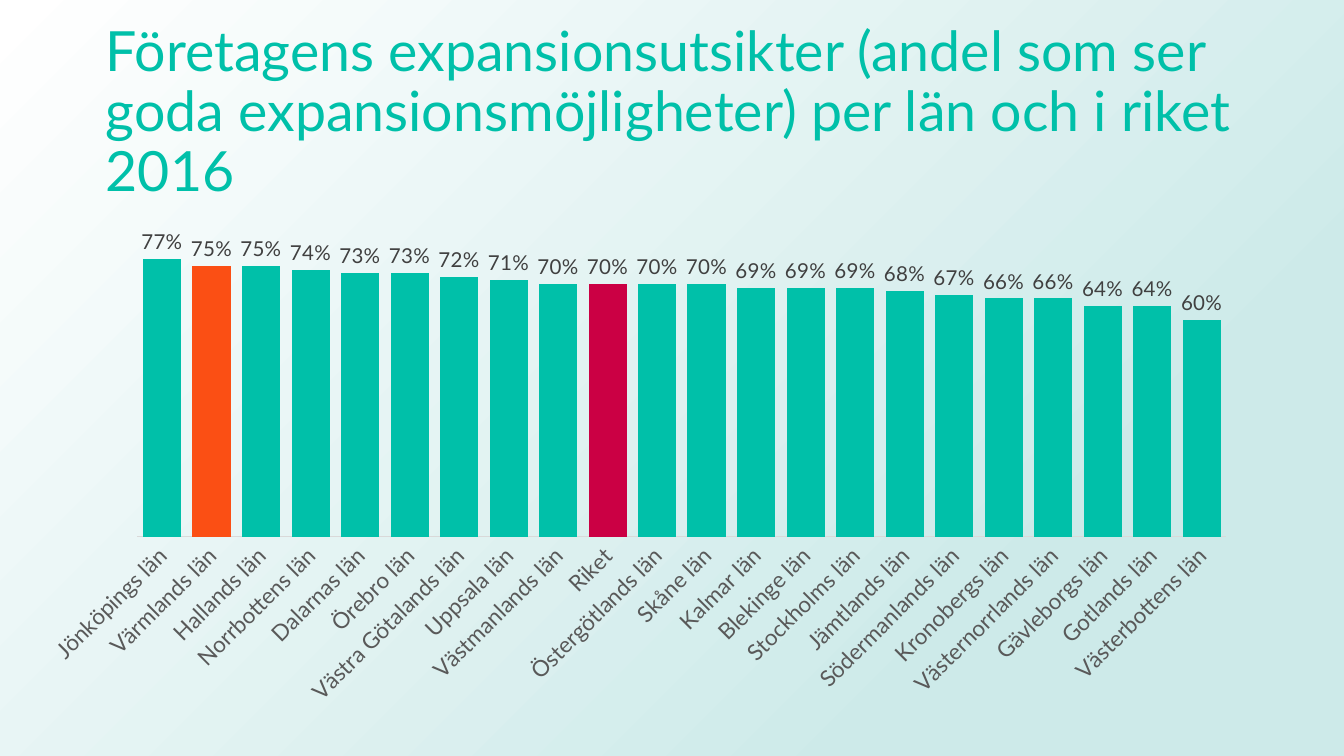
"""Builds a slide with expansion prospects per Swedish county in 2016."""
import pptx
import pptx.chart.data
import pptx.dml.color
import pptx.enum.chart
import pptx.enum.shapes
import pptx.enum.text
import pptx.oxml
import pptx.oxml.ns
import pptx.util
from pptx.util import Cm

COLORS = {
    "teal": "00C0A9",
    "orange": "FB4F14",
    "crimson": "CB0044",
    "mist": "CDEAE9",
    "white": "FFFFFF",
    "axis_text": "595959",
    "label_text": "404040",
    "axis_line": "D9D9D9",
}
WIDTH, HEIGHT = Cm(25.4), Cm(14.29)
TITLE = ("Företagens expansionsutsikter (andel som ser goda "
         "expansionsmöjligheter) per län och i riket 2016")
SHARES = {
    "Jönköpings län": 0.77, "Värmlands län": 0.75, "Hallands län": 0.75,
    "Norrbottens län": 0.74, "Dalarnas län": 0.73, "Örebro län": 0.73,
    "Västra Götalands län": 0.72, "Uppsala län": 0.71,
    "Västmanlands län": 0.70, "Riket": 0.70, "Östergötlands län": 0.70,
    "Skåne län": 0.70, "Kalmar län": 0.69, "Blekinge län": 0.69,
    "Stockholms län": 0.69, "Jämtlands län": 0.68,
    "Södermanlands län": 0.67, "Kronobergs län": 0.66,
    "Västernorrlands län": 0.66, "Gävleborgs län": 0.64,
    "Gotlands län": 0.64, "Västerbottens län": 0.60,
}
HIGHLIGHTS = {"Värmlands län": "orange", "Riket": "crimson"}
AUTOMATIC_ROTATION = "-60000000"


def rgb(name):
    """Return the named colour."""
    return pptx.dml.color.RGBColor.from_string(COLORS[name])


def apply(target, values):
    """Set each attribute of the target from a dict."""
    for attribute, value in values.items():
        setattr(target, attribute, value)


def style_font(font, size, color):
    """Give a font the slide's typeface, a size and a colour."""
    apply(font, {"name": "Lato", "size": pptx.util.Pt(size), "bold": False})
    font.color.rgb = rgb(color)


def paint(fill, color):
    """Make a fill solid in the named colour."""
    fill.solid()
    fill.fore_color.rgb = rgb(color)


def add_backdrop(slide):
    """Cover the slide with a gradient centred on the lower right corner."""
    backdrop = slide.shapes.add_shape(
        pptx.enum.shapes.MSO_SHAPE.RECTANGLE, 0, 0, WIDTH, HEIGHT)
    backdrop.shadow.inherit = False
    backdrop.line.fill.background()
    gradient = pptx.oxml.parse_xml(
        f'<a:gradFill {pptx.oxml.ns.nsdecls("a")} rotWithShape="1"><a:gsLst>'
        f'<a:gs pos="23000"><a:srgbClr val="{COLORS["mist"]}"/></a:gs>'
        f'<a:gs pos="100000"><a:srgbClr val="{COLORS["white"]}"/></a:gs>'
        '</a:gsLst><a:path path="circle">'
        '<a:fillToRect l="100000" t="100000"/></a:path></a:gradFill>')
    properties = backdrop.fill._xPr
    properties.find(pptx.oxml.ns.qn("a:prstGeom")).addnext(gradient)


def add_title(slide):
    """Add the heading."""
    heading = slide.shapes.add_textbox(Cm(1.75), Cm(0.76), Cm(21.9), Cm(2.77))
    frame = heading.text_frame
    apply(frame, {"word_wrap": True,
                  "vertical_anchor": pptx.enum.text.MSO_ANCHOR.MIDDLE})
    paragraph = frame.paragraphs[0]
    paragraph.line_spacing = 0.9
    sentence = paragraph.add_run()
    sentence.text = TITLE
    style_font(sentence.font, 29.7, "teal")


def format_axes(chart):
    """Show county names that slant to fit and hide the share scale."""
    counties, shares = chart.category_axis, chart.value_axis
    no_ticks = pptx.enum.chart.XL_TICK_MARK.NONE
    apply(counties, {"major_tick_mark": no_ticks, "minor_tick_mark": no_ticks,
                     "has_major_gridlines": False})
    style_font(counties.tick_labels.font, 12, "axis_text")
    counties.tick_labels._element.txPr.bodyPr.set("rot", AUTOMATIC_ROTATION)
    counties.format.line.color.rgb = rgb("axis_line")
    counties.format.line.width = pptx.util.Pt(0.75)
    apply(shares, {"minimum_scale": 0, "maximum_scale": 0.9,
                   "has_major_gridlines": False, "visible": False})
    apply(shares.tick_labels, {"number_format": "0%",
                               "number_format_is_linked": False})


def format_bars(plot):
    """Colour the bars, pick out the highlights and label every value."""
    apply(plot, {"gap_width": 30, "vary_by_categories": False,
                 "has_data_labels": True})
    apply(plot.data_labels, {
        "show_value": True, "number_format": "0%",
        "number_format_is_linked": False,
        "position": pptx.enum.chart.XL_LABEL_POSITION.OUTSIDE_END})
    style_font(plot.data_labels.font, 11, "label_text")
    bars = plot.series[0]
    bars.invert_if_negative = False
    paint(bars.format.fill, "teal")
    names = list(SHARES)
    for county, color in HIGHLIGHTS.items():
        paint(bars.points[names.index(county)].format.fill, color)


def add_share_chart(slide):
    """Add the column chart of shares per county."""
    data = pptx.chart.data.CategoryChartData(number_format="0%")
    data.categories = list(SHARES)
    data.add_series("Series 1", list(SHARES.values()))
    chart = slide.shapes.add_chart(
        pptx.enum.chart.XL_CHART_TYPE.COLUMN_CLUSTERED,
        Cm(0.48), Cm(3.81), Cm(23.16), Cm(9.7), data).chart
    apply(chart, {"has_legend": False, "has_title": False})
    apply(chart.font, {"name": "Calibri", "size": pptx.util.Pt(10)})
    format_axes(chart)
    format_bars(chart.plots[0])


def main():
    """Build and save the slide."""
    deck = pptx.Presentation()
    apply(deck, {"slide_width": WIDTH, "slide_height": HEIGHT})
    slide = deck.slides.add_slide(deck.slide_layouts[6])
    add_backdrop(slide)
    add_title(slide)
    add_share_chart(slide)
    deck.save("out.pptx")


if __name__ == "__main__":
    main()
